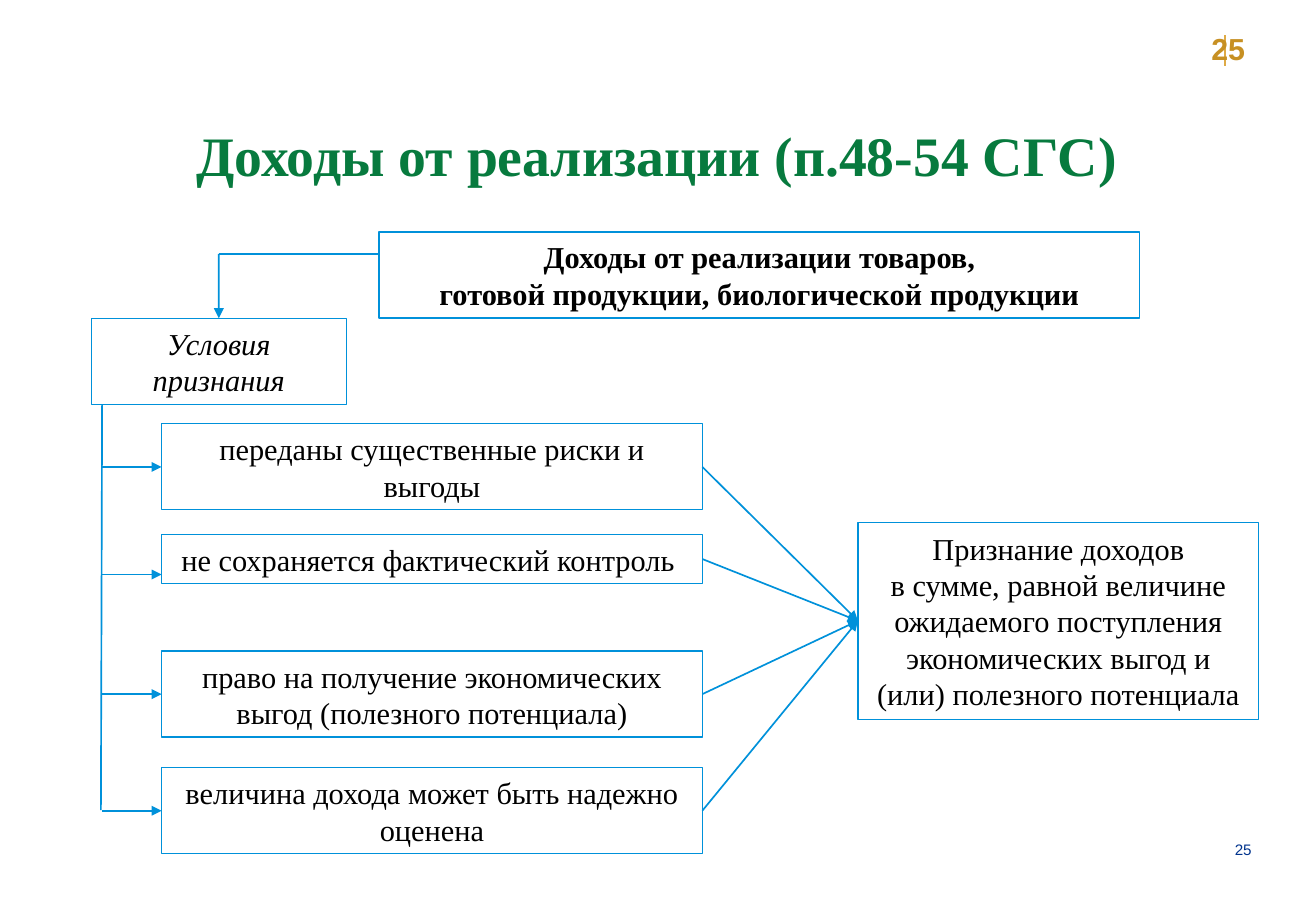
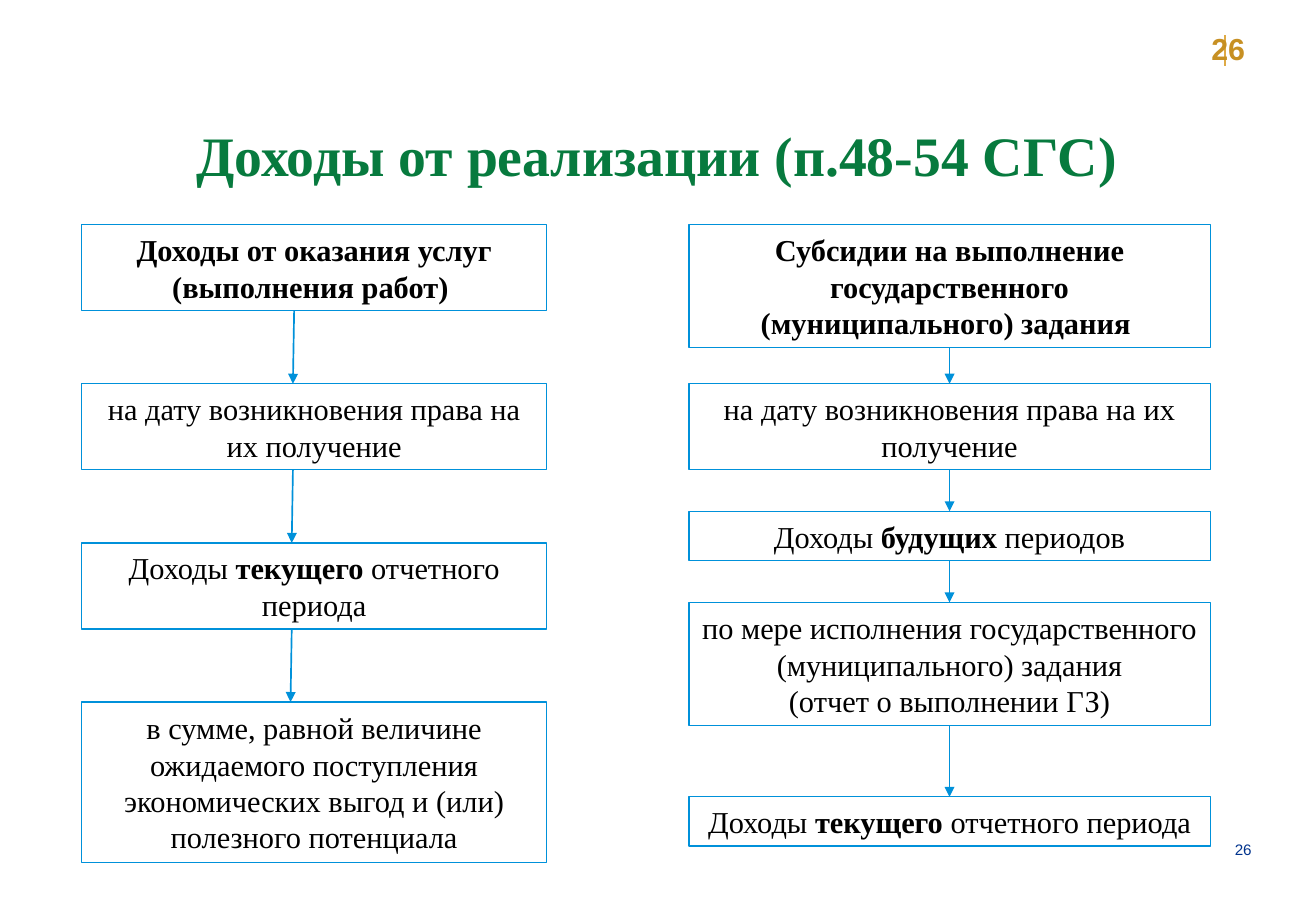
"""Two slides on sales income: recognition conditions and recognition sequences."""
from pptx import Presentation
from pptx import util as u
from pptx.dml.color import RGBColor
from pptx.enum import shapes, text
from pptx.oxml.ns import qn
from lxml import etree

COLOURS = {"title": "077A3E", "edge": "0091DA", "ink": "000000",
           "badge": "C79023", "badge_rule": "DEAA46", "footer": "00338D"}
SERIF, SANS = "Times New Roman", "Arial"
CENTRE, LEFT, RIGHT = text.PP_ALIGN.CENTER, text.PP_ALIGN.LEFT, text.PP_ALIGN.RIGHT
TITLE = "Доходы от реализации (п.48-54 СГС)"
TOP_SIDE, LEFT_SIDE, BOTTOM_SIDE, RIGHT_SIDE = range(4)

deck = Presentation()
deck.slide_width, deck.slide_height = u.Inches(10.83), u.Inches(7.5)
COL, ROW = deck.slide_width / 100, deck.slide_height / 100
LINE_ROWS, PADDING_ROWS = 4.06, 1.33


def block(slide, x, y, w, wording, lines=0, h=0, size=18, ink="ink", face=SERIF,
          align=CENTRE, bold=None, italic=None):
    """Place text in percent of the slide; a line count makes an outlined box."""
    place = [round(v) for v in (x * COL, y * ROW, w * COL,
                                (h or PADDING_ROWS + LINE_ROWS * lines) * ROW)]
    if lines:
        item = slide.shapes.add_shape(shapes.MSO_SHAPE.RECTANGLE, *place)
        item.shadow.inherit = False
        item.fill.background()
        item.line.color.rgb = RGBColor.from_string(COLOURS["edge"])
        item.line.width = u.Pt(0.75)
    else:
        item = slide.shapes.add_textbox(*place)
    frame = item.text_frame
    frame.word_wrap = True
    frame.vertical_anchor = text.MSO_ANCHOR.MIDDLE
    for n, sentence in enumerate(wording.split("\n")):
        para = frame.add_paragraph() if n else frame.paragraphs[0]
        para.alignment = align
        para.font.name, para.font.size = face, u.Pt(size)
        para.font.bold, para.font.italic = bold, italic
        para.font.color.rgb = RGBColor.from_string(COLOURS[ink])
        for k, piece in enumerate(sentence.split("*")):
            run = para.add_run()
            run.text = piece
            if k % 2:
                run.font.bold = True
    return item


def link(slide, x1, y1, x2, y2, start=None, end=None, arrow=True, ink="edge"):
    """Draw a line in percent of the slide, optionally joined to (box, side)."""
    rule = slide.shapes.add_connector(
        shapes.MSO_CONNECTOR.STRAIGHT, round(x1 * COL), round(y1 * ROW),
        round(x2 * COL), round(y2 * ROW))
    rule.line.color.rgb = RGBColor.from_string(COLOURS[ink])
    rule.line.width = u.Pt(1)
    if arrow:
        etree.SubElement(rule.line._get_or_add_ln(), qn("a:tailEnd"), type="triangle")
    etree.SubElement(rule._element.spPr, qn("a:effectLst"))
    if start:
        rule.begin_connect(*start)
    if end:
        rule.end_connect(*end)


pages = []
for number in (25, 26):
    page = deck.slides.add_slide(deck.slide_layouts[6])
    footer = block(page, 91.14, 92.13, 3.97, str(number), h=2.13, size=9,
                   ink="footer", face=SANS, align=RIGHT).text_frame
    footer.margin_left = footer.margin_right = footer.margin_top = footer.margin_bottom = 0
    link(page, 93.07, 3.87, 93.07, 7.2, arrow=False, ink="badge_rule")
    block(page, 91.14, 2.67, 6.37, str(number), h=5.33, ink="badge", face=SANS,
          align=LEFT, bold=True)
    heading = block(page, 2.31, 12.13, 95.2, TITLE, h=10.53, size=33, ink="title", bold=True)
    heading.text_frame.paragraphs[0].line_spacing = 0.9
    pages.append(page)
conditions_page, sequences_page = pages

block(conditions_page, 28.81, 25.47, 57.8,
      "Доходы от реализации товаров,\nготовой продукции, биологической продукции", 2, bold=True)
conditions = block(conditions_page, 6.93, 34.93, 19.39, "Условия признания", 2, italic=True)
recognition = block(
    conditions_page, 65.19, 57.33, 30.47,
    "Признание доходов\nв сумме, равной величине ожидаемого поступления "
    "экономических выгод и (или) полезного потенциала", 5)
link(conditions_page, 28.81, 27.87, 16.62, 27.87, arrow=False)
link(conditions_page, 16.62, 27.87, 16.62, 34.93, end=(conditions, TOP_SIDE))
TRUNK = 7.76
link(conditions_page, TRUNK, 44.4, TRUNK - 0.09, 88.93, arrow=False)
for y, lines, branch, wording in (
        (46.53, 2, None, "переданы существенные риски и выгоды"),
        (58.67, 1, 63.07, "не сохраняется фактический контроль "),
        (71.47, 2, None, "право на получение экономических выгод (полезного потенциала)"),
        (84.27, 2, None, "величина дохода может быть надежно оценена")):
    condition = block(conditions_page, 12.28, y, 41.09, wording, lines)
    middle = y + (PADDING_ROWS + LINE_ROWS * lines) / 2
    link(conditions_page, TRUNK, branch or middle, 12.28, branch or middle,
         end=None if branch else (condition, LEFT_SIDE))
    link(conditions_page, 53.37, middle, 65.19, 68.13,
         (condition, RIGHT_SIDE), (recognition, LEFT_SIDE))

services = (
    (24.67, 2, "Доходы от оказания услуг (выполнения работ) "),
    (42.13, 2, "на дату возникновения права на их получение"),
    (59.6, 2, "Доходы *текущего* отчетного периода"),
    (77.07, 4, "в сумме, равной величине ожидаемого поступления "
               "экономических выгод и (или) полезного потенциала"))
subsidies = (
    (24.67, 3, "Субсидии на выполнение государственного (муниципального) задания "),
    (42.13, 2, "на дату возникновения права на их получение"),
    (56.13, 1, "Доходы *будущих* периодов"),
    (66.13, 3, "по мере исполнения государственного (муниципального) задания\n"
               "(отчет о выполнении ГЗ)"),
    (87.47, 1, "Доходы *текущего* отчетного периода"))
for x, w, axis, steps in ((6.19, 35.36, 22.35, services), (52.35, 39.61, None, subsidies)):
    previous, bottom = None, 0
    for n, (y, lines, wording) in enumerate(steps):
        step = block(sequences_page, x, y, w, wording, lines, bold=None if n else True)
        if previous and axis:
            link(sequences_page, axis - 0.09 * (n - 1), bottom, axis - 0.09 * n, y)
        elif previous:
            link(sequences_page, x + w / 2, bottom, x + w / 2, y,
                 (previous, BOTTOM_SIDE), (step, TOP_SIDE))
        previous, bottom = step, y + PADDING_ROWS + LINE_ROWS * lines

deck.save("out.pptx")
